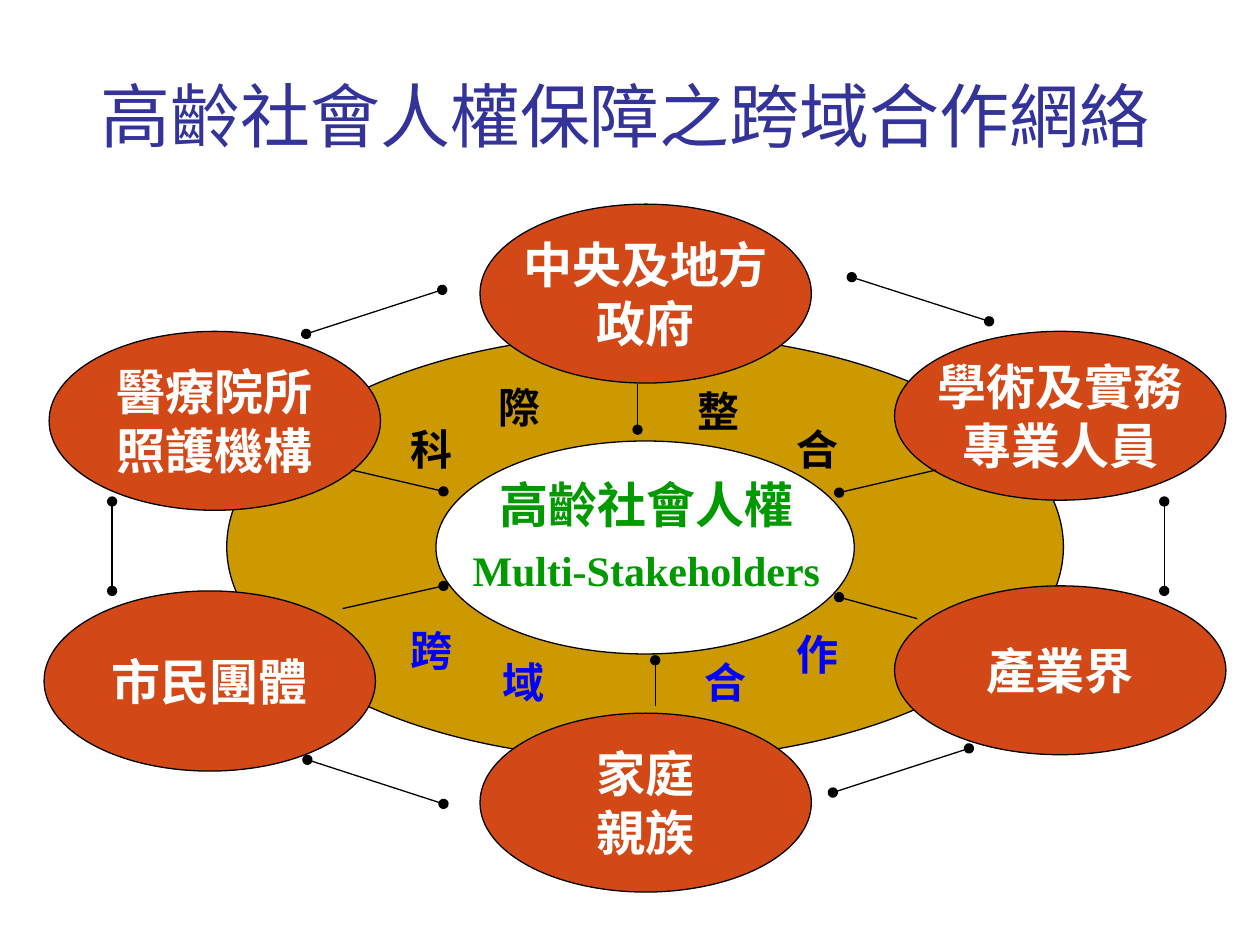
from lxml.etree import SubElement
from pptx import Presentation
from pptx.dml.color import RGBColor
from pptx.enum.shapes import MSO_CONNECTOR, MSO_SHAPE
from pptx.enum.text import MSO_ANCHOR, MSO_AUTO_SIZE, PP_ALIGN
from pptx.oxml.ns import qn
from pptx.util import Inches, Pt

WHITE = RGBColor(0xFF, 0xFF, 0xFF)
BLACK = RGBColor(0, 0, 0)
GOLD = RGBColor(0xCC, 0x99, 0)
RUST = RGBColor(0xD3, 0x48, 0x17)
GREEN = RGBColor(0, 0x99, 0)
BLUE = RGBColor(0, 0, 0xFF)
NAVY = RGBColor(0x33, 0x33, 0x99)
SERIF, SANS = "Times New Roman", "Noto Sans CJK JP"

TITLE = "高齡社會人權保障之跨域合作網絡"
CORE = [("高齡社會人權", 28), ("Multi-Stakeholders", 24)]

# Ellipses: left, top, width, height
RING = (1.8, 2.65, 6.64, 3.38)
HOLE = (3.46, 3.5, 3.32, 1.69)
NODE_W = 2.63
NODES = [  # lines of text, left, top, height
    (["中央及地方", "政府"], 3.81, 1.62, 1.42),
    (["學術及實務", "專業人員"], 7.1, 2.63, 1.34),
    (["醫療院所", "照護機構"], 0.39, 2.63, 1.42),
    (["產業界"], 7.1, 4.65, 1.34),
    (["市民團體"], 0.35, 4.69, 1.43),
    (["家庭", "親族"], 3.81, 5.66, 1.42),
]
LABELS = [  # colour, (character, left, top)
    (BLACK, [("科", 3.16, 3.31), ("際", 3.86, 2.98),
             ("整", 5.44, 3.01), ("合", 6.22, 3.31)]),
    (BLUE, [("跨", 3.16, 4.91), ("域", 3.89, 5.16),
            ("合", 5.49, 5.16), ("作", 6.22, 4.94)]),
]
# Lines: x1, y1, x2, y2
LINKS = [  # between neighbours, a dot at both ends
    (2.43, 2.65, 3.51, 2.3), (0.89, 3.98, 0.89, 4.69),
    (9.24, 3.98, 9.24, 4.69), (6.61, 6.29, 7.69, 5.94),
    (2.44, 6.03, 3.52, 6.38), (6.76, 2.2, 7.85, 2.55),
]
SPOKES = [  # towards the centre, a dot at the inner end
    (2.79, 3.73, 3.52, 3.9), (5.2, 5.6, 5.2, 5.24),
    (5.06, 3.05, 5.06, 3.41), (2.72, 4.83, 3.52, 4.65),
    (7.43, 3.73, 6.66, 3.91), (7.28, 4.91, 6.66, 4.74),
]


def add_run(para, text, size, color, font=SERIF, bold=True):
    run = para.add_run()
    run.text = text
    run.font.size, run.font.bold = Pt(size), bold
    run.font.name = font
    run.font.color.rgb = color
    SubElement(run.font._element, qn("a:ea"), typeface=SANS)


def add_lines(frame, lines, color, align=PP_ALIGN.CENTER):
    """Fill a frame with one paragraph per (text, size) pair."""
    for i, (text, size) in enumerate(lines):
        para = frame.add_paragraph() if i else frame.paragraphs[0]
        para.alignment = align
        add_run(para, text, size, color)


def add_oval(shapes, box, fill):
    oval = shapes.add_shape(MSO_SHAPE.OVAL, *map(Inches, box))
    oval.shadow.inherit = False
    oval.fill.solid()
    oval.fill.fore_color.rgb = fill
    oval.line.color.rgb = BLACK
    oval.line.width = Pt(0.75)
    return oval


def add_text(shapes, box):
    frame = shapes.add_textbox(*map(Inches, box)).text_frame
    frame.word_wrap = True
    return frame


def add_link(shapes, ends, dots):
    """Draw a line with ovals at the ends named in dots."""
    link = shapes.add_connector(MSO_CONNECTOR.STRAIGHT, *map(Inches, ends))
    link.line.color.rgb = BLACK
    link.line.width = Pt(0.75)
    for dot in dots:
        SubElement(link.line._get_or_add_ln(), qn("a:" + dot), type="oval")
    SubElement(link._element.spPr, qn("a:effectLst"))


def main():
    prs = Presentation()
    prs.slide_width, prs.slide_height = Inches(10), Inches(7.5)
    slide = prs.slides.add_slide(prs.slide_layouts[5])
    shapes = slide.shapes

    title = shapes.title
    title.left, title.top = Inches(0.42), Inches(0.28)
    title.width, title.height = Inches(9.08), Inches(1.25)
    frame = title.text_frame
    frame.auto_size = MSO_AUTO_SIZE.NONE
    frame.vertical_anchor = MSO_ANCHOR.MIDDLE
    frame.paragraphs[0].alignment = PP_ALIGN.CENTER
    add_run(frame.paragraphs[0], TITLE, 40, NAVY, SANS, False)

    add_oval(shapes, RING, GOLD)
    add_oval(shapes, HOLE, WHITE)
    for lines, left, top, height in NODES:
        node = add_oval(shapes, (left, top, NODE_W, height), RUST)
        frame = node.text_frame
        frame.word_wrap = False
        frame.vertical_anchor = MSO_ANCHOR.MIDDLE
        add_lines(frame, [(line, 28) for line in lines], WHITE)

    core = add_text(shapes, (3.45, 3.81, 3.36, 1.44))
    add_lines(core, CORE, GREEN)
    for para in core.paragraphs:
        para.line_spacing = 0.8
    core.paragraphs[1].space_before = Pt(12)

    for color, chars in LABELS:
        for char, left, top in chars:
            frame = add_text(shapes, (left, top, 0.62, 0.5))
            add_lines(frame, [(char, 24)], color, PP_ALIGN.LEFT)

    for ends in LINKS:
        add_link(shapes, ends, ["headEnd", "tailEnd"])
    for ends in SPOKES:
        add_link(shapes, ends, ["tailEnd"])

    prs.save("out.pptx")


if __name__ == "__main__":
    main()
